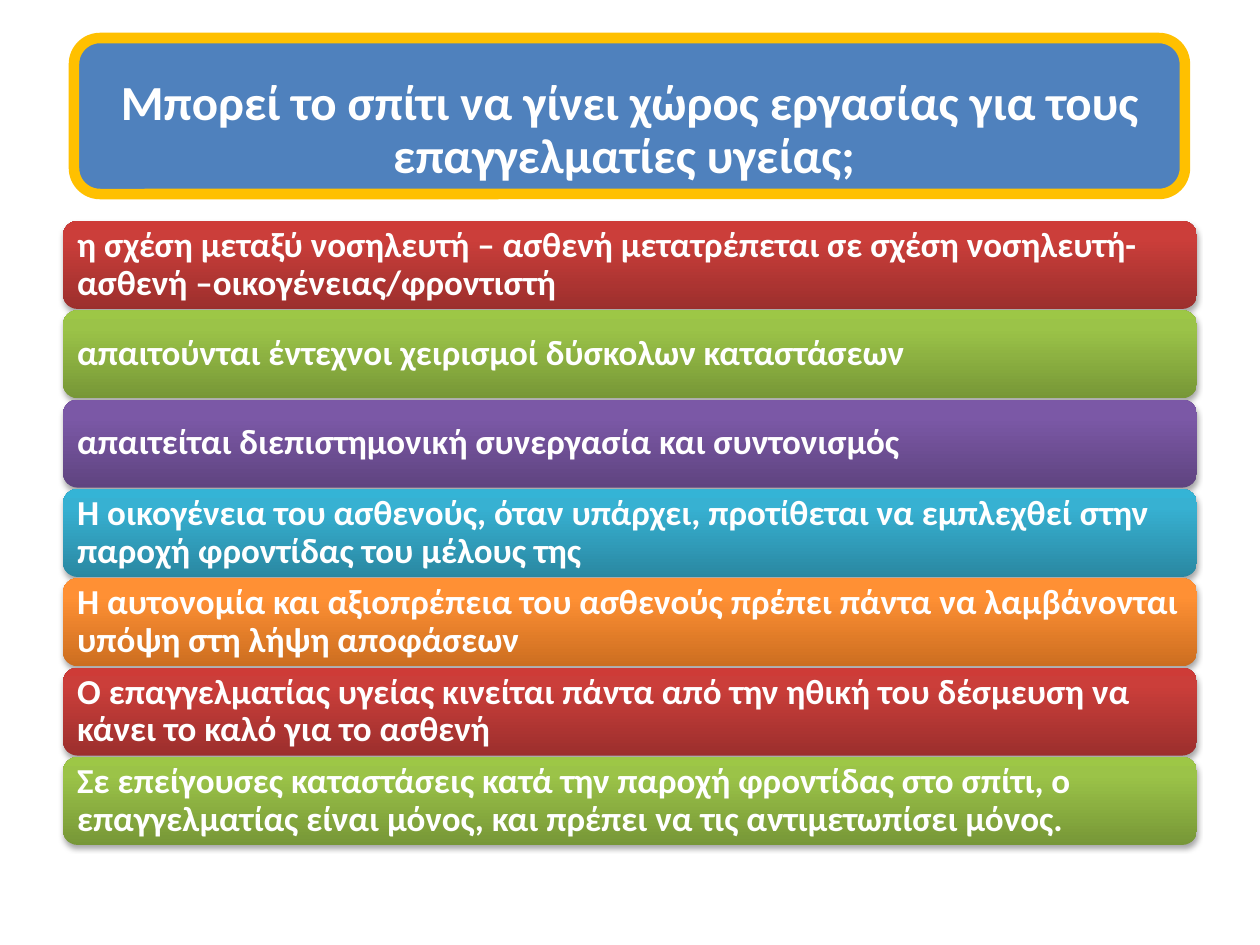
from lxml import etree
from pptx import Presentation
from pptx import util as u
from pptx.dml.color import RGBColor
from pptx.enum import shapes, text
from pptx.oxml import parse_xml
from pptx.oxml.ns import nsdecls, qn

EMU_PER_PIXEL = 914400 / 126
FONT = "Calibri"
WHITE = "FFFFFF"
RED = ("9C2F2D", "CB3E3A", "CE3B37")
GREEN = ("779737", "9BC348", "9DC746")
PURPLE = ("5F4480", "7B58A6", "7C57A8")
BLUE = ("2A88A2", "37B1D2", "34B4D6")
ORANGE = ("CC6E20", "FF9034", "FF9136")

TITLE = "Μπορεί το σπίτι να γίνει χώρος εργασίας για τους επαγγελματίες υγείας; "
STATEMENTS = [
    "η σχέση μεταξύ νοσηλευτή – ασθενή μετατρέπεται σε σχέση νοσηλευτή-ασθενή –οικογένειας/φροντιστή",
    "απαιτούνται έντεχνοι χειρισμοί δύσκολων καταστάσεων",
    "απαιτείται διεπιστημονική συνεργασία και συντονισμός",
    "Η οικογένεια του ασθενούς, όταν υπάρχει, προτίθεται να εμπλεχθεί στην παροχή φροντίδας του μέλους της",
    "Η αυτονομία και αξιοπρέπεια του ασθενούς πρέπει πάντα να λαμβάνονται υπόψη στη λήψη αποφάσεων",
    "Ο επαγγελματίας υγείας κινείται πάντα από την ηθική του δέσμευση να κάνει το καλό για το ασθενή",
    "Σε επείγουσες καταστάσεις κατά την παροχή φροντίδας στο σπίτι, ο επαγγελματίας είναι μόνος, "
    "και πρέπει να τις αντιμετωπίσει μόνος.",
]
GRADIENTS = [RED, GREEN, PURPLE, BLUE, ORANGE, RED, GREEN]


def px(value):
    """Turn pixels into EMU."""
    return u.Emu(round(value * EMU_PER_PIXEL))


def color(value):
    """Turn a hex string into a colour."""
    return RGBColor.from_string(value)


def add_rounded_box(slide, left, top, width, height):
    """Add a rounded rectangle without the theme shadow."""
    shape = slide.shapes.add_shape(
        shapes.MSO_SHAPE.ROUNDED_RECTANGLE, px(left), px(top), px(width), px(height))
    shape.shadow.inherit = False
    return shape


def write_text(shape, content, size, alignment, margins):
    """Write one bold white paragraph, centred vertically."""
    frame = shape.text_frame
    frame.word_wrap = True
    frame.auto_size = text.MSO_AUTO_SIZE.NONE
    frame.vertical_anchor = text.MSO_ANCHOR.MIDDLE
    frame.margin_left = frame.margin_right = px(margins[0])
    frame.margin_top = frame.margin_bottom = px(margins[1])
    frame.text = content
    paragraph = frame.paragraphs[0]
    paragraph.alignment = alignment
    paragraph.line_spacing = 0.9
    paragraph.font.name = FONT
    paragraph.font.size = u.Pt(size)
    paragraph.font.bold = True
    paragraph.font.color.rgb = color(WHITE)


def apply_gradient(shape, stops):
    """Fill a shape from bottom to top with three colours."""
    gradient = "".join(
        f'<a:gs pos="{position}000"><a:srgbClr val="{stop}"/></a:gs>'
        for position, stop in zip((0, 80, 100), stops))
    fill = parse_xml(
        f'<a:gradFill {nsdecls("a")} rotWithShape="1"><a:gsLst>{gradient}</a:gsLst>'
        '<a:lin ang="16200000" scaled="0"/></a:gradFill>')
    shape._element.spPr.find(qn("a:prstGeom")).addnext(fill)


def apply_shadow(shape):
    """Give a shape a soft shadow straight below it."""
    effects = shape._element.spPr.find(qn("a:effectLst"))
    shadow = etree.SubElement(
        effects, qn("a:outerShdw"), blurRad=str(u.Pt(3.1)), dist=str(u.Pt(1.8)),
        dir="5400000", rotWithShape="0")
    shade = etree.SubElement(shadow, qn("a:srgbClr"), val="000000")
    etree.SubElement(shade, qn("a:alpha"), val="35000")


def add_title(slide, left, top, width, height):
    """Place the title on its framed rounded panel."""
    panel = add_rounded_box(slide, left, top, width, height)
    panel.fill.solid()
    panel.fill.fore_color.rgb = color("4F81BD")
    panel.line.color.rgb = color("FFC000")
    panel.line.width = u.Pt(6)
    title = slide.shapes.title
    title._element.addprevious(panel._element)
    title.left, title.top = px(left + 8), px(top + 23)
    title.width, title.height = px(width - 16), px(height - 16)
    write_text(title, TITLE, 28, text.PP_ALIGN.CENTER, (15, 8))


def add_statements(slide, left, top, width, height):
    """Stack the statement bars evenly in the given box."""
    bar_height = 88
    pitch = (height - bar_height) / (len(STATEMENTS) - 1)
    for index, (statement, stops) in enumerate(zip(STATEMENTS, GRADIENTS)):
        bar = add_rounded_box(slide, left, top + index * pitch, width, bar_height)
        bar.line.fill.background()
        apply_gradient(bar, stops)
        apply_shadow(bar)
        write_text(bar, statement, 20, text.PP_ALIGN.LEFT, (10, 10))


def main():
    """Build the slide and save it."""
    presentation = Presentation()
    presentation.slide_width, presentation.slide_height = px(1260), px(945)
    slide = presentation.slides.add_slide(presentation.slide_layouts[5])
    add_title(slide, 74, 38, 1111, 156)
    add_statements(slide, 63, 221, 1134, 624)
    presentation.save("out.pptx")


if __name__ == "__main__":
    main()
